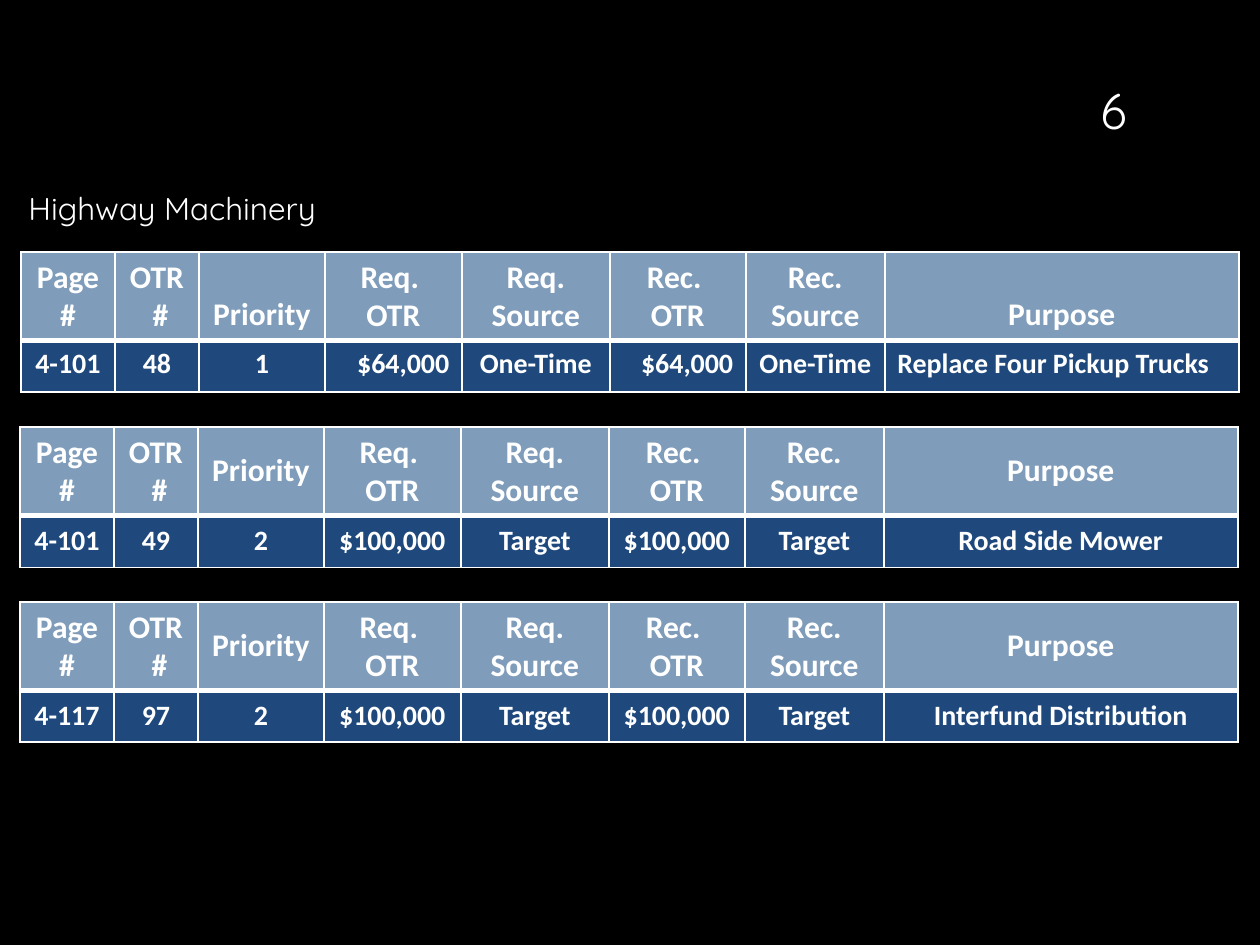
"""Build the Highway Machinery slide with its three request tables."""
from lxml import etree
from pptx import Presentation
from pptx.dml.color import RGBColor
from pptx.enum.text import MSO_ANCHOR, PP_ALIGN
from pptx.oxml.ns import qn
from pptx.util import Emu, Pt

LEFT, CENTER, RIGHT = PP_ALIGN.LEFT, PP_ALIGN.CENTER, PP_ALIGN.RIGHT
TOP, MIDDLE, BOTTOM = MSO_ANCHOR.TOP, MSO_ANCHOR.MIDDLE, MSO_ANCHOR.BOTTOM

EMU_PER_PX = 914400 // 126
WHITE, BLACK, HEADER_BLUE, ROW_BLUE = "FFFFFF", "000000", "7F9DBB", "1F497D"

COLUMN_WIDTHS = [94, 84, 126, 137, 148, 136, 139, 354]
HEADER_HEIGHT, ROW_HEIGHT = 88, 52
HEADINGS = ["Page \n#", "OTR\n #", "Priority", "Req. \nOTR", "Req. Source",
            "Rec. \nOTR", "Rec. Source", "Purpose"]

CENTERED = [CENTER] * len(HEADINGS)
MIXED = [CENTER, CENTER, CENTER, RIGHT, CENTER, RIGHT, CENTER, LEFT]

REQUESTS = [
    {"left": 21, "top": 252, "header_anchor": BOTTOM, "row_anchor": TOP, "aligns": MIXED,
     "values": ["4-101", "48", "1", "$64,000", "One-Time", "$64,000", "One-Time",
                "Replace Four Pickup Trucks"]},
    {"left": 20, "top": 427, "header_anchor": MIDDLE, "row_anchor": MIDDLE, "aligns": CENTERED,
     "values": ["4-101", "49", "2", "$100,000", "Target", "$100,000", "Target",
                "Road Side Mower"]},
    {"left": 20, "top": 602, "header_anchor": MIDDLE, "row_anchor": MIDDLE, "aligns": CENTERED,
     "values": ["4-117", "97", "2", "$100,000", "Target", "$100,000", "Target",
                "Interfund Distribution"]},
]


def px(length):
    """Turn whole pixels into EMU."""
    return Emu(length * EMU_PER_PX)


def color(hex_code):
    """Turn a hex string into a colour."""
    return RGBColor.from_string(hex_code)


def write(frame, text, align, font, size, bold=False):
    """Write one paragraph per line of text in a single white format."""
    frame.text = text
    font_format = {"name": font, "size": Pt(size), "bold": bold}
    for paragraph in frame.paragraphs:
        paragraph.alignment = align
        for run in paragraph.runs:
            run.font.color.rgb = color(WHITE)
            for attribute, value in font_format.items():
                setattr(run.font, attribute, value)


def add_label(slide, text, box, align, anchor, size):
    """Add a text box with one line of text."""
    frame = slide.shapes.add_textbox(*map(px, box)).text_frame
    frame.word_wrap = True
    frame.vertical_anchor = anchor
    write(frame, text, align, "Quicksand", size)


def set_borders(cell, widths):
    """Draw white cell borders with the given point widths per side."""
    properties = cell._tc.get_or_add_tcPr()
    for position, (side, width) in enumerate(widths.items()):
        line = etree.Element(qn(f"a:ln{side}"), w=str(Pt(width)))
        fill = etree.SubElement(line, qn("a:solidFill"))
        etree.SubElement(fill, qn("a:srgbClr"), val=WHITE)
        properties.insert(position, line)


def fill_cell(cell, text, align, anchor, size, fill, borders):
    """Fill, frame and write one table cell."""
    cell.fill.solid()
    cell.fill.fore_color.rgb = color(fill)
    cell.vertical_anchor = anchor
    set_borders(cell, borders)
    write(cell.text_frame, text, align, "Calibri", size, bold=True)


def add_request_table(slide, request):
    """Add one request as a heading row above a value row."""
    table = slide.shapes.add_table(
        2, len(HEADINGS), px(request["left"]), px(request["top"]),
        px(sum(COLUMN_WIDTHS)), px(HEADER_HEIGHT + ROW_HEIGHT)).table
    for row, height in zip(table.rows, (HEADER_HEIGHT, ROW_HEIGHT)):
        row.height = px(height)
    header_borders = {"L": 1, "R": 1, "T": 1, "B": 3}
    row_borders = {"L": 1, "R": 1, "T": 3, "B": 1}
    columns = zip(COLUMN_WIDTHS, HEADINGS, request["values"], request["aligns"])
    for index, (width, heading, value, align) in enumerate(columns):
        table.columns[index].width = px(width)
        fill_cell(table.cell(0, index), heading, CENTER, request["header_anchor"],
                  18, HEADER_BLUE, header_borders)
        fill_cell(table.cell(1, index), value, align, request["row_anchor"],
                  16, ROW_BLUE, row_borders)


def main():
    """Build and save the slide."""
    deck = Presentation()
    deck.slide_width, deck.slide_height = px(1260), px(945)
    slide = deck.slides.add_slide(deck.slide_layouts[6])
    slide.background.fill.solid()
    slide.background.fill.fore_color.rgb = color(BLACK)
    add_label(slide, "6", (1070, 40, 87, 106), CENTER, BOTTOM, 28)
    add_label(slide, "Highway Machinery", (16, 183, 336, 50), LEFT, TOP, 18)
    for request in REQUESTS:
        add_request_table(slide, request)
    deck.save("out.pptx")


if __name__ == "__main__":
    main()
